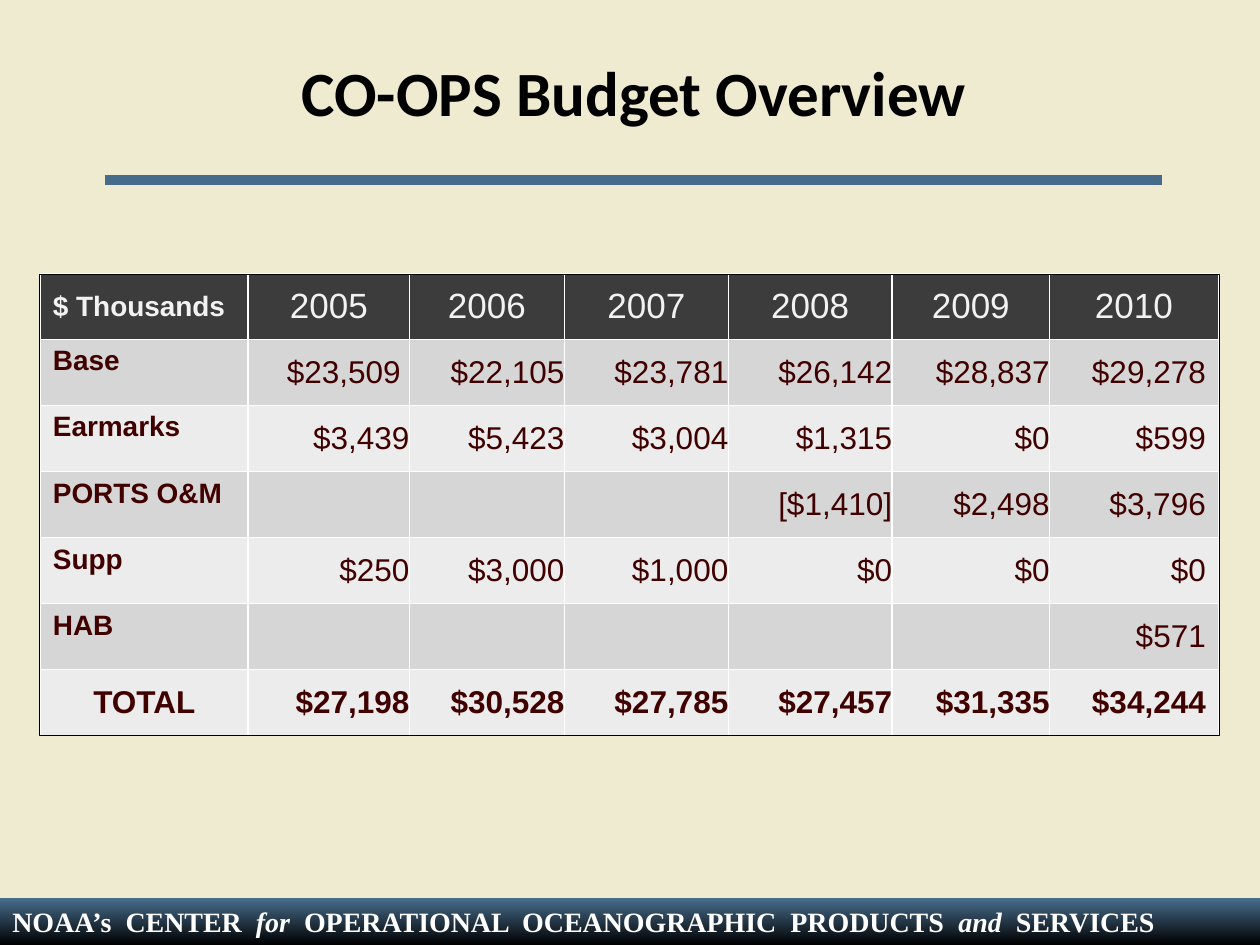
import pptx
import pptx.util
import pptx.dml.color
import pptx.enum.shapes
import pptx.enum.text
import pptx.oxml.ns
from dataclasses import dataclass
from lxml import etree

Inches = pptx.util.Inches
Pt = pptx.util.Pt
Align = pptx.enum.text.PP_ALIGN
Anchor = pptx.enum.text.MSO_ANCHOR
Shape = pptx.enum.shapes.MSO_SHAPE


@dataclass(frozen=True)
class Theme:
    background: str = "EFEBD1"
    blue: str = "476C8B"
    black: str = "000000"
    white: str = "FFFFFF"
    header_fill: str = "3C3C3C"
    header_text: str = "F2F2F2"
    body_text: str = "400000"
    bands: tuple = ("D6D6D6", "ECECEC")
    title_font: str = "Calibri"
    table_font: str = "Arial"
    footer_font: str = "Times New Roman"
    title_size: int = 36
    year_size: int = 20
    value_size: int = 18
    label_size: int = 16


THEME = Theme()
COLUMN_WIDTHS = [1.65, 1.28, 1.23, 1.3, 1.3, 1.25, 1.34]
BUDGET = [
    ["$ Thousands", "2005", "2006", "2007", "2008", "2009", "2010"],
    ["Base", "$23,509", "$22,105", "$23,781", "$26,142", "$28,837", "$29,278"],
    ["Earmarks", "$3,439", "$5,423", "$3,004", "$1,315", "$0", "$599"],
    ["PORTS O&M", "", "", "", "[$1,410]", "$2,498", "$3,796"],
    ["Supp", "$250", "$3,000", "$1,000", "$0", "$0", "$0"],
    ["HAB", "", "", "", "", "", "$571"],
    ["TOTAL", "$27,198", "$30,528", "$27,785", "$27,457", "$31,335", "$34,244"],
]
FOOTER = [
    ("NOAA’s  CENTER  ", False),
    ("for  ", True),
    ("OPERATIONAL  OCEANOGRAPHIC  PRODUCTS  ", False),
    ("and  ", True),
    ("SERVICES", False),
]


def rgb(value):
    return pptx.dml.color.RGBColor.from_string(value)


def add_text(para, text, *, font, size, color, bold=False, italic=False,
             align=Align.LEFT, spacing=None):
    para.alignment = align
    if spacing:
        para.line_spacing = spacing
    span = para.add_run()
    span.text = text
    span.font.name = font
    span.font.size = Pt(size)
    span.font.bold = bold
    span.font.italic = italic
    span.font.color.rgb = rgb(color)


def add_title(page, text):
    box = page.shapes.add_textbox(Inches(0.75), Inches(0.17), Inches(8.56), Inches(1.25))
    frame = box.text_frame
    frame.word_wrap = True
    frame.vertical_anchor = Anchor.MIDDLE
    add_text(frame.paragraphs[0], text, font=THEME.title_font, size=THEME.title_size,
             color=THEME.black, bold=True, align=Align.CENTER, spacing=0.7)


def add_rule(page):
    rule = page.shapes.add_connector(
        pptx.enum.shapes.MSO_CONNECTOR.STRAIGHT,
        Inches(0.83), Inches(1.43), Inches(9.22), Inches(1.43))
    rule.line.color.rgb = rgb(THEME.blue)
    rule.line.width = Pt(6)
    etree.SubElement(rule._element.spPr, pptx.oxml.ns.qn("a:effectLst"))


def add_footer(page):
    bar = page.shapes.add_shape(Shape.RECTANGLE, 0, Inches(7.13), Inches(10), Inches(0.37))
    bar.shadow.inherit = False
    bar.line.fill.background()
    bar.fill.gradient()
    bar.fill.gradient_angle = 270  # top to bottom
    for stop, color in zip(bar.fill.gradient_stops, (THEME.blue, THEME.black)):
        stop.color.rgb = rgb(color)
    frame = bar.text_frame
    frame.word_wrap = True
    frame.vertical_anchor = Anchor.MIDDLE
    for text, italic in FOOTER:
        add_text(frame.paragraphs[0], text, font=THEME.footer_font,
                 size=THEME.label_size, color=THEME.white, bold=True, italic=italic)


def set_borders(cell, color, width):
    properties = cell._tc.get_or_add_tcPr()
    for position, side in enumerate(("a:lnL", "a:lnR", "a:lnT", "a:lnB")):
        line = etree.Element(pptx.oxml.ns.qn(side), w=str(int(Pt(width))))
        fill = etree.SubElement(line, pptx.oxml.ns.qn("a:solidFill"))
        etree.SubElement(fill, pptx.oxml.ns.qn("a:srgbClr"), val=color)
        properties.insert(position, line)


def cell_format(row, column):
    """Text format of a budget cell, by its place in the table."""
    is_total = row == len(BUDGET) - 1
    look = dict(font=THEME.table_font, color=THEME.body_text, size=THEME.value_size,
                bold=is_total or column == 0, align=Align.RIGHT)
    if row == 0:
        look.update(color=THEME.header_text, size=THEME.year_size, align=Align.CENTER)
    if column == 0:
        look.update(size=THEME.label_size, align=Align.LEFT)
        if is_total:
            look.update(size=THEME.value_size, align=Align.CENTER)
    return look


def fill_cell(cell, row, column, text):
    last_row, last_column = len(BUDGET) - 1, len(COLUMN_WIDTHS) - 1
    cell.fill.solid()
    cell.fill.fore_color.rgb = rgb(THEME.bands[(row - 1) % 2] if row else THEME.header_fill)
    set_borders(cell, THEME.white, 1)
    is_label = column == 0 and 0 < row < last_row
    cell.vertical_anchor = Anchor.TOP if is_label else Anchor.MIDDLE
    # Inner value columns sit flush with the cell edge
    if row and 0 < column < last_column:
        cell.margin_left = cell.margin_top = cell.margin_bottom = 0
        cell.margin_right = Inches(0.07) if (row, column) == (1, 1) else 0
    if text:
        add_text(cell.text_frame.paragraphs[0], text, **cell_format(row, column))


def add_budget_table(page):
    table = page.shapes.add_table(
        len(BUDGET), len(COLUMN_WIDTHS),
        Inches(0.32), Inches(2.17), Inches(9.35), Inches(3.67)).table
    table.horz_banding = False
    for column, width in zip(table.columns, COLUMN_WIDTHS):
        column.width = Inches(width)
    for row, values in enumerate(BUDGET):
        for column, text in enumerate(values):
            fill_cell(table.cell(row, column), row, column, text)


def add_table_frame(page):
    frame = page.shapes.add_shape(
        Shape.RECTANGLE, Inches(0.31), Inches(2.18), Inches(9.37), Inches(3.66))
    frame.shadow.inherit = False
    frame.fill.background()
    frame.line.color.rgb = rgb(THEME.black)
    frame.line.width = Pt(0.5)


def main():
    deck = pptx.Presentation()
    deck.slide_width, deck.slide_height = Inches(10), Inches(7.5)
    page = deck.slides.add_slide(deck.slide_layouts[6])
    page.background.fill.solid()
    page.background.fill.fore_color.rgb = rgb(THEME.background)

    # Footer bar and heading
    add_footer(page)
    add_rule(page)
    add_title(page, "CO-OPS Budget Overview")

    # Budget figures with their outline
    add_budget_table(page)
    add_table_frame(page)

    deck.save("out.pptx")


if __name__ == "__main__":
    main()
